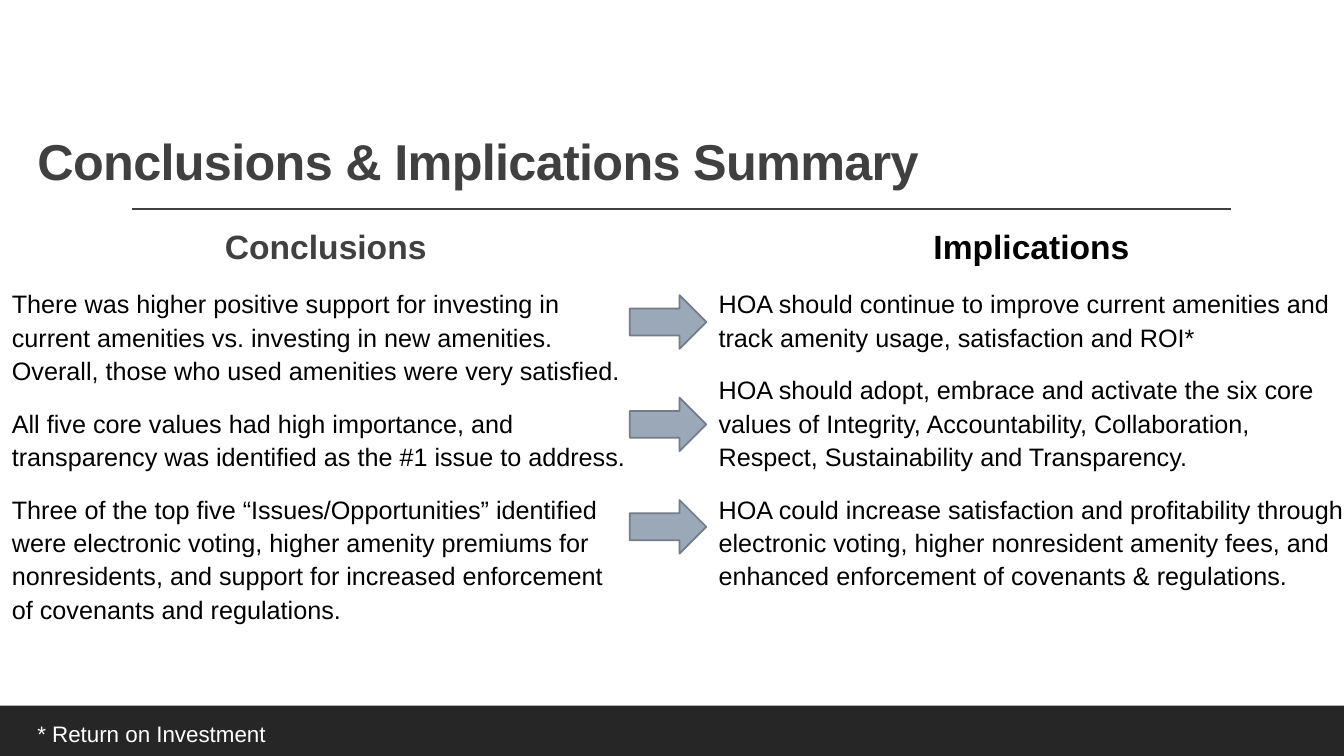
from lxml import etree
from pptx import Presentation
from pptx.dml.color import RGBColor
from pptx.enum.shapes import MSO_CONNECTOR, MSO_SHAPE
from pptx.enum.text import MSO_ANCHOR, PP_ALIGN
from pptx.oxml.ns import qn
from pptx.util import Cm, Pt

COLORS = {"dark": "404040", "footer": "262626", "arrow": "9BA8B7",
          "arrow_line": "737C87", "text": "000000", "white": "FFFFFF"}
FONT = "Arial"


def rgb(name):
    return RGBColor.from_string(COLORS[name])


def format_runs(p, size, color, bold=False):
    for r in p.runs:
        r.font.name = FONT
        r.font.size = Pt(size)
        r.font.bold = bold
        r.font.color.rgb = rgb(color)


prs = Presentation()
prs.slide_width, prs.slide_height = Cm(33.87), Cm(19.05)
s = prs.slides.add_slide(prs.slide_layouts[5])

# Footer band and title rule
band = s.shapes.add_shape(MSO_SHAPE.RECTANGLE, 0, Cm(17.78), prs.slide_width, Cm(1.27))
band.shadow.inherit = False
band.fill.solid()
band.fill.fore_color.rgb = rgb("footer")
band.line.fill.background()

rule = s.shapes.add_connector(MSO_CONNECTOR.STRAIGHT, Cm(3.33), Cm(5.27), Cm(31.01), Cm(5.27))
rule.line.color.rgb = rgb("dark")
rule.line.width = Pt(1)
etree.SubElement(rule._element.spPr, qn("a:effectLst"))

# Title
title = s.shapes.title
title.left, title.top, title.width, title.height = Cm(0.69), Cm(0.91), Cm(27.94), Cm(4.04)
tf = title.text_frame
tf.text = "Conclusions & Implications Summary"
tf.word_wrap = True
tf.vertical_anchor = MSO_ANCHOR.BOTTOM
p = tf.paragraphs[0]
p.alignment = PP_ALIGN.LEFT
p.line_spacing = 0.9
format_runs(p, 36, "dark", True)
p.runs[0].font._element.set("spc", "-50")

# Two columns: left, width, height, heading colour, heading indent, paragraphs
columns = [
    (0.3, 15.57, 12.57, "dark", 0.25, [
        "Conclusions",
        "There was higher positive support for investing in current amenities vs. investing in "
        "new amenities. Overall, those who used amenities were very satisfied.",
        "All five core values had high importance, and transparency was identified as the #1 "
        "issue to address.",
        "Three of the top five “Issues/Opportunities” identified were electronic voting, higher "
        "amenity premiums for nonresidents, and support for increased enforcement of covenants "
        "and regulations."]),
    (18.11, 15.77, 13.18, "text", 0, [
        "Implications",
        "HOA should continue to improve current amenities and track amenity usage, satisfaction "
        "and ROI*",
        "HOA should adopt, embrace and activate the six core values of Integrity, "
        "Accountability, Collaboration, Respect, Sustainability and Transparency.",
        "HOA could increase satisfaction and profitability through electronic voting, higher "
        "nonresident amenity fees, and enhanced enforcement of covenants & regulations."]),
]
for left, width, height, heading_color, indent, texts in columns:
    tf = s.shapes.add_textbox(Cm(left), Cm(5.46), Cm(width), Cm(height)).text_frame
    tf.word_wrap = True
    tf.margin_left = tf.margin_right = 0
    tf.text = "\n".join(texts)
    for p in tf.paragraphs:
        p.line_spacing = 1.1
        p.space_before, p.space_after = Pt(12), Pt(2)
        format_runs(p, 18, "text")
    heading = tf.paragraphs[0]
    heading.alignment = PP_ALIGN.CENTER
    heading._p.get_or_add_pPr().set("marL", str(Cm(indent)))
    format_runs(heading, 24, heading_color, True)

# Arrows from conclusions to implications
for i in range(3):
    arrow = s.shapes.add_shape(MSO_SHAPE.RIGHT_ARROW, Cm(15.87), Cm(7.44 + 2.58 * i),
                               Cm(1.93), Cm(1.35))
    arrow.shadow.inherit = False
    arrow.fill.solid()
    arrow.fill.fore_color.rgb = rgb("arrow")
    arrow.line.color.rgb = rgb("arrow_line")
    arrow.line.width = Pt(1.25)

# Footnote
tf = s.shapes.add_textbox(Cm(0.69), Cm(18.03), Cm(6.35), Cm(0.94)).text_frame
tf.word_wrap = False
tf.text = "* Return on Investment"
format_runs(tf.paragraphs[0], 16, "white")

prs.save("out.pptx")
